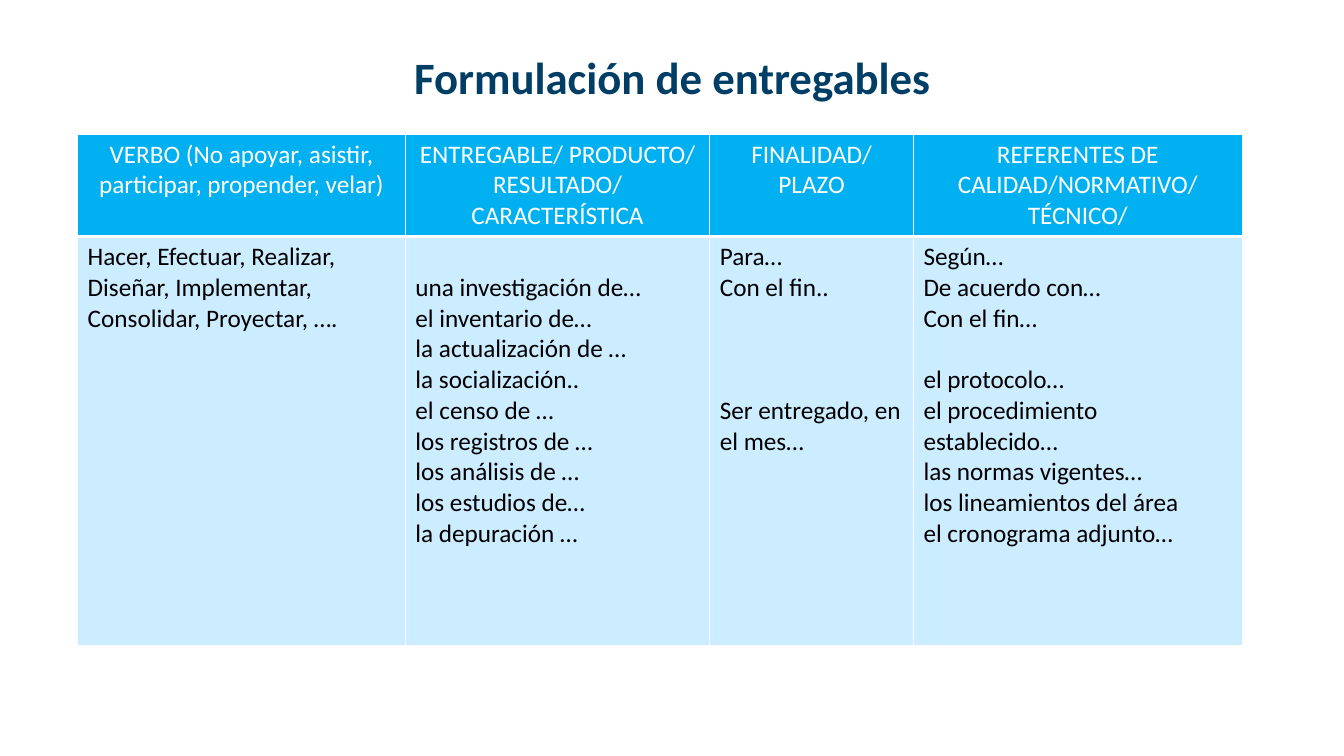
from pptx import Presentation
from pptx.dml.color import RGBColor
from pptx.enum.text import MSO_ANCHOR, PP_ALIGN
from pptx.oxml import parse_xml
from pptx.oxml.ns import nsdecls
from pptx.util import Inches, Pt

NAVY = RGBColor(0x00, 0x3E, 0x65)
SKY = RGBColor(0x00, 0xB0, 0xF0)
PALE = RGBColor(0xCC, 0xEC, 0xFF)
WHITE = RGBColor(0xFF, 0xFF, 0xFF)
BLACK = RGBColor(0x00, 0x00, 0x00)

LINE = 22  # height in points of one 18 pt line
COLUMN_WIDTHS = (3.25, 3.02, 2.02, 3.26)
ROW_HEIGHTS = (1.01, 4.06)

HEADINGS = (
    ["VERBO (No apoyar, asistir, participar, propender, velar)"],
    ["ENTREGABLE/ PRODUCTO/ RESULTADO/ CARACTERÍSTICA"],
    ["FINALIDAD/", "PLAZO"],
    ["REFERENTES DE CALIDAD/NORMATIVO/ TÉCNICO/"],
)
EXAMPLES = (
    ["Hacer, Efectuar, Realizar, Diseñar, Implementar, Consolidar, Proyectar, …."],
    ["una investigación de…", "el inventario de…", "la actualización de …",
     "la socialización..", "el censo de …", "los registros de …",
     "los análisis de …", "los estudios de…", "la depuración …"],
    ["Para…", "Con el fin..", "Ser entregado, en el mes…"],
    ["Según…", "De acuerdo con…", "Con el fin…", "el protocolo…",
     "el procedimiento establecido…", "las normas vigentes…",
     "los lineamientos del área", "el cronograma adjunto…"],
)
# Lines left free before a paragraph, by its text
GAPS = {"Ser entregado, en el mes…": 3, "el protocolo…": 1}


def write(frame, lines, size=18, color=BLACK, bold=False,
          align=PP_ALIGN.LEFT, spacing=None):
    """Fill a text frame with one formatted paragraph per line."""
    for index, line in enumerate(lines):
        para = frame.paragraphs[0] if index == 0 else frame.add_paragraph()
        para.alignment = align
        if spacing:
            para.line_spacing = spacing
        if line in GAPS:
            para.space_before = Pt(GAPS[line] * LINE)
        span = para.add_run()
        span.text = line
        font = span.font
        font.name, font.size, font.bold = "Calibri", Pt(size), bold
        font.color.rgb = color


class SlideBuilder:
    def __init__(self, deck):
        self.page = deck.slides.add_slide(deck.slide_layouts[5])

    def title(self, text, left, top, width, height):
        box = self.page.shapes.title
        box.left, box.top = Inches(left), Inches(top)
        box.width, box.height = Inches(width), Inches(height)
        box.text_frame.vertical_anchor = MSO_ANCHOR.MIDDLE
        write(box.text_frame, [text], size=32, color=NAVY, bold=True,
              align=PP_ALIGN.CENTER, spacing=0.9)

    def table(self, left, top, widths, heights):
        frame = self.page.shapes.add_table(
            len(heights), len(widths), Inches(left), Inches(top),
            Inches(sum(widths)), Inches(sum(heights)))
        for column, width in zip(frame.table.columns, widths):
            column.width = Inches(width)
        for row, height in zip(frame.table.rows, heights):
            row.height = Inches(height)
        return frame.table

    def cell(self, cell, lines, fill, bottom=1, **style):
        self.borders(cell, L=1, R=1, T=1, B=bottom)
        cell.fill.solid()
        cell.fill.fore_color.rgb = fill
        write(cell.text_frame, lines, **style)

    def borders(self, cell, **widths):
        properties = cell._tc.get_or_add_tcPr()
        for side, width in widths.items():
            properties.append(parse_xml(
                f'<a:ln{side} {nsdecls("a")} w="{Pt(width)}"><a:solidFill>'
                f'<a:srgbClr val="{WHITE}"/></a:solidFill></a:ln{side}>'))


def main():
    deck = Presentation()
    deck.slide_width, deck.slide_height = Inches(13.33), Inches(7.5)
    slide = SlideBuilder(deck)

    # Title
    slide.title("Formulación de entregables", 0.92, 0.4, 11.5, 0.79)

    # Table: headings above examples
    table = slide.table(0.77, 1.33, COLUMN_WIDTHS, ROW_HEIGHTS)
    for column, (heading, examples) in enumerate(zip(HEADINGS, EXAMPLES)):
        slide.cell(table.cell(0, column), heading, SKY, bottom=3,
                   color=WHITE, align=PP_ALIGN.CENTER)
        slide.cell(table.cell(1, column), examples, PALE)

    # The deliverables start one line lower
    table.cell(1, 1).margin_top = Inches(0.05) + Pt(LINE)

    deck.save("out.pptx")


if __name__ == "__main__":
    main()
